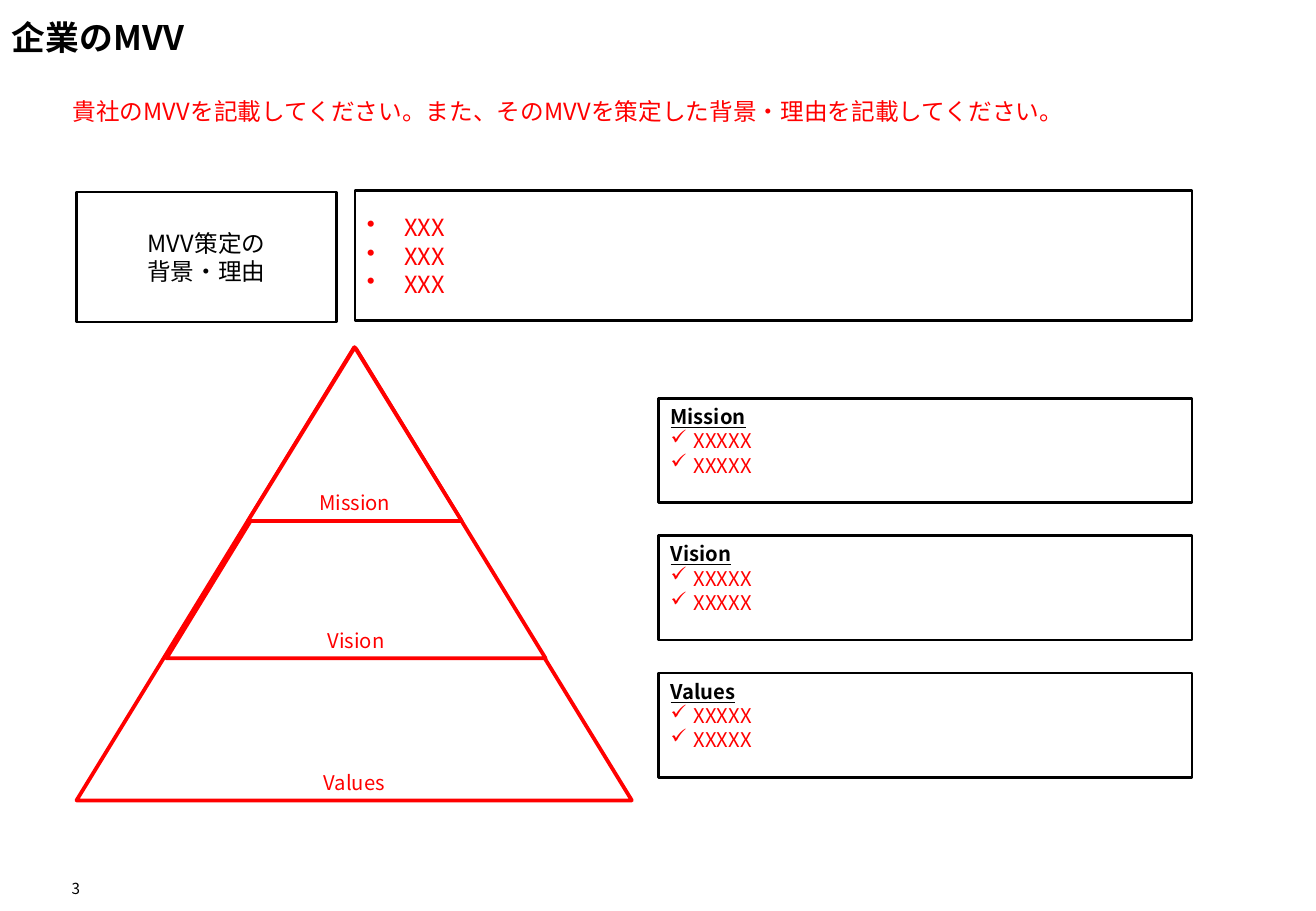
from pptx import Presentation
from pptx.util import Inches, Pt
from pptx.dml.color import RGBColor
from pptx.enum.shapes import MSO_SHAPE as Shape
from pptx.enum.text import MSO_ANCHOR as Anchor, PP_ALIGN as Align
from pptx.oxml.ns import qn
from lxml.etree import SubElement as Sub

BLACK = RGBColor(0x00, 0x00, 0x00)
RED = RGBColor(0xFF, 0x00, 0x00)
WHITE = RGBColor(0xFF, 0xFF, 0xFF)


class Deck:
    face = "Noto Sans CJK JP"

    def __init__(self, wide, high):
        self.prs = Presentation()
        self.prs.slide_width = Inches(wide)
        self.prs.slide_height = Inches(high)
        self.slide = self.prs.slides.add_slide(self.prs.slide_layouts[6])

    def style(self, para, size, color, bold=False):
        for run in para.runs:
            font = run.font
            font.size = Pt(size)
            font.color.rgb = color
            font.bold = bold
            font.name = self.face
            Sub(font._element, qn("a:ea"), typeface=self.face)

    def bullet(self, para, mark, dent):
        props = para._p.get_or_add_pPr()
        props.set("marL", str(Inches(dent)))
        props.set("indent", str(-Inches(dent)))
        Sub(props, qn("a:buChar"), char=mark)

    def fill_text(self, frame, text, size, color, anchor, align, bold=False):
        frame.word_wrap = True
        frame.vertical_anchor = anchor
        frame.text = text
        for para in frame.paragraphs:
            para.alignment = align
            self.style(para, size, color, bold)

    def label(self, box, text, size, color, anchor=Anchor.TOP, bold=False):
        item = self.slide.shapes.add_textbox(*map(Inches, box))
        self.fill_text(item.text_frame, text, size, color, anchor, Align.LEFT,
                       bold)
        return item.text_frame

    def shape(self, kind, box, text, size, color, edge, width,
              anchor=Anchor.MIDDLE, align=Align.CENTER):
        item = self.slide.shapes.add_shape(kind, *map(Inches, box))
        item.shadow.inherit = False
        item.fill.solid()
        item.fill.fore_color.rgb = WHITE
        item.line.color.rgb = edge
        item.line.width = Pt(width)
        self.fill_text(item.text_frame, text, size, color, anchor, align)
        return item.text_frame

    def layer(self, box, text):
        self.shape(Shape.FLOWCHART_EXTRACT, box, text, 12, RED, RED, 2.25,
                   Anchor.BOTTOM)

    def panel(self, box, text, size, color, anchor=Anchor.MIDDLE,
              align=Align.CENTER):
        return self.shape(Shape.RECTANGLE, box, text, size, color, BLACK, 1.5,
                          anchor, align)

    def card(self, box, name):
        frame = self.panel(box, f"{name}\nXXXXX\nXXXXX", 12, RED, Anchor.TOP,
                           Align.LEFT)
        head, *items = frame.paragraphs
        font = head.runs[0].font
        font.color.rgb = BLACK
        font.bold = True
        font.underline = True
        for para in items:
            self.bullet(para, "✓", 0.19)

    def number(self, box, text):
        frame = self.label(box, text, 9, BLACK, Anchor.BOTTOM)
        frame.margin_left = frame.margin_right = 0
        frame.margin_top = frame.margin_bottom = 0
        frame.word_wrap = False
        frame.paragraphs[0].alignment = Align.RIGHT


def main():
    deck = Deck(10.83, 7.5)
    deck.label((0, 0, 9.34, 0.61), "企業のMVV", 20, BLACK, Anchor.MIDDLE, True)
    deck.label((0.5, 0.75, 9.84, 0.4),
               "貴社のMVVを記載してください。また、そのMVVを策定した背景・理由を記載してください。",
               14, RED)

    deck.layer((0.63, 2.86, 4.57, 3.73), "Values")
    deck.layer((1.37, 2.87, 3.12, 2.55), "Vision")
    deck.layer((2.04, 2.86, 1.76, 1.43), "Mission")

    for row, name in enumerate(("Mission", "Vision", "Values")):
        deck.card((5.42, 3.28 + 1.13 * row, 4.39, 0.86), name)

    deck.panel((0.63, 1.58, 2.14, 1.07), "MVV策定の\n背景・理由", 14, BLACK)
    cause = deck.panel((2.92, 1.57, 6.89, 1.07), "XXX\nXXX\nXXX", 14, RED,
                       align=Align.LEFT)
    for para in cause.paragraphs:
        deck.bullet(para, "•", 0.31)

    deck.number((0.46, 7.2, 0.2, 0.19), "3")
    deck.prs.save("out.pptx")


if __name__ == "__main__":
    main()
